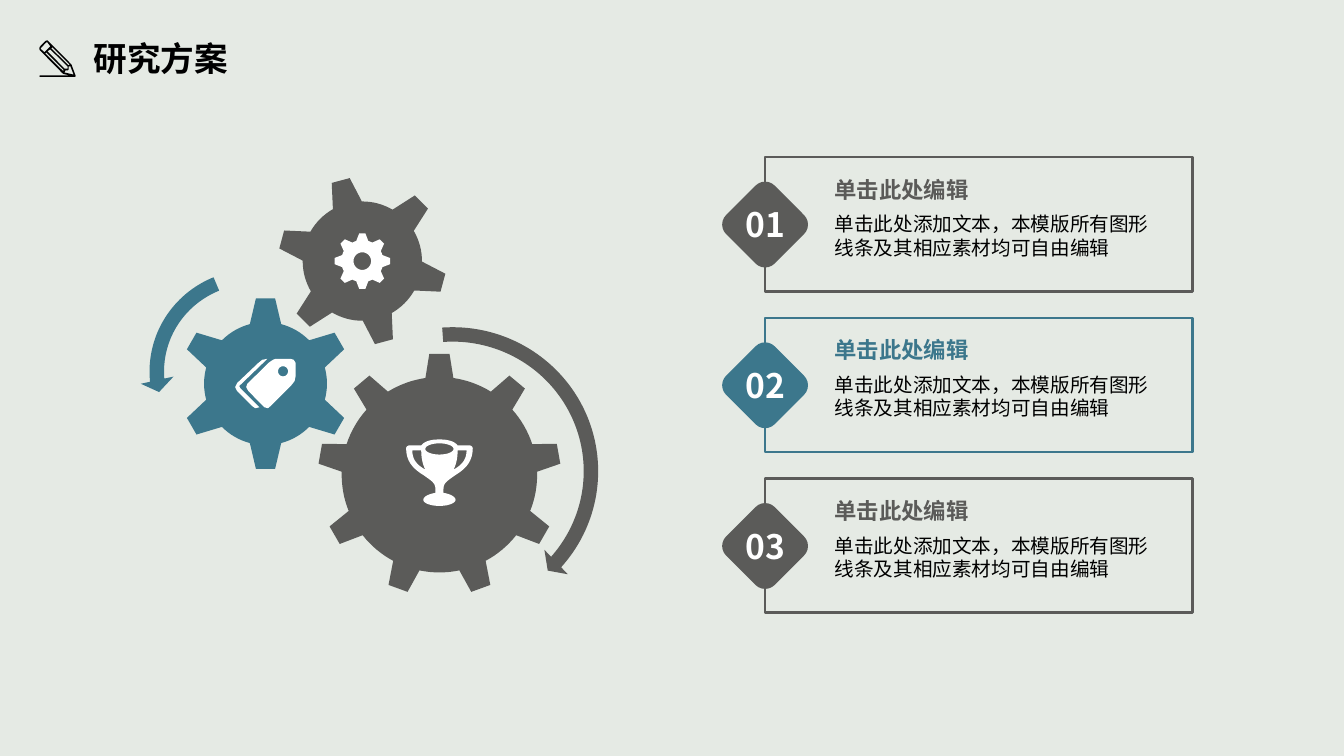
from dataclasses import dataclass
from math import asin, cos, hypot, pi, radians, sin

from lxml.etree import SubElement
from pptx import Presentation
from pptx.dml.color import RGBColor as RGB
from pptx.enum.shapes import MSO_SHAPE as Preset
from pptx.enum.text import MSO_AUTO_SIZE as AutoSize, PP_ALIGN as Align
from pptx.oxml.ns import qn
from pptx.util import Pt

FONT = "Noto Sans CJK SC"
COLORS = {
    "paper": "E5EAE4",
    "dark": "5B5B59",
    "teal": "3C778C",
    "white": "FFFFFF",
    "black": "000000",
}
HEADING = "单击此处编辑"
BODY = "单击此处添加文本，本模版所有图形线条及其相应素材均可自由编辑"
CARD_TOP, CARD_PITCH = 112.3, 114.8
UNITS_PER_POINT = 100
Points = list[tuple[float, float]]


@dataclass
class Gear:
    x: float
    y: float
    teeth: int
    tip_radius: float
    tip_half: float
    root_radius: float
    root_half: float
    color: str
    turn: float = 0
    hole: float = 0


@dataclass
class Arrow:
    preset: Preset
    box: tuple[float, float, float, float]
    adjustments: tuple[float, ...]
    color: str


@dataclass
class Card:
    number: str
    color: str


@dataclass
class Icon:
    x: float
    y: float
    contours: list[Points]
    color: str


def rgb(color: str) -> RGB:
    return RGB.from_string(COLORS[color])


def ellipse(x: float, y: float, rx: float, ry: float, steps: int = 32) -> Points:
    turns = [2 * pi * i / steps for i in range(steps)]
    return [(x + rx * cos(t), y + ry * sin(t)) for t in turns]


def flatten(path: list[tuple[float, ...]], steps: int = 10) -> Points:
    points: Points = []
    for node in path:
        if len(node) == 2:
            points.append(node)
            continue
        x0, y0 = points[-1]
        x1, y1, x2, y2, x3, y3 = node
        for i in range(1, steps + 1):
            t = i / steps
            a, b, c, d = (1 - t) ** 3, 3 * t * (1 - t) ** 2, 3 * t * t * (1 - t), t ** 3
            points.append((a * x0 + b * x1 + c * x2 + d * x3,
                           a * y0 + b * y1 + c * y2 + d * y3))
    return points


def mirror(points: Points) -> Points:
    return [(-x, y) for x, y in reversed(points)]


def gear_outline(gear: Gear, arc_steps: int = 8) -> Points:
    pitch = 2 * pi / gear.teeth
    root_angle = asin(gear.root_half / gear.root_radius)
    tip_angle = asin(gear.tip_half / gear.tip_radius)
    tip_corner = hypot(gear.tip_radius, gear.tip_half)
    valley = pitch - 2 * root_angle
    outline: Points = []
    for tooth in range(gear.teeth):
        middle = radians(gear.turn) + tooth * pitch
        corners = [(tip_corner, middle - tip_angle), (tip_corner, middle + tip_angle)]
        corners += [(gear.root_radius, middle + root_angle + valley * i / arc_steps)
                    for i in range(arc_steps + 1)]
        outline += [(r * sin(a), -r * cos(a)) for r, a in corners]
    return outline


def paint(shape, color: str) -> None:
    shape.shadow.inherit = False
    shape.fill.solid()
    shape.fill.fore_color.rgb = rgb(color)
    shape.line.fill.background()


def draw_icon(shapes, icon: Icon) -> None:
    contours = [[((icon.x + x) * UNITS_PER_POINT, (icon.y + y) * UNITS_PER_POINT)
                 for x, y in contour] for contour in icon.contours]
    builder = shapes.build_freeform(*contours[0][0], scale=Pt(1) / UNITS_PER_POINT)
    builder.add_line_segments(contours[0][1:], close=True)
    for contour in contours[1:]:
        builder.move_to(*contour[0])
        builder.add_line_segments(contour[1:], close=True)
    paint(builder.convert_to_shape(), icon.color)


def draw_gear(shapes, gear: Gear) -> None:
    contours = [gear_outline(gear)]
    if gear.hole:
        contours.append(ellipse(0, 0, gear.hole, gear.hole))
    draw_icon(shapes, Icon(gear.x, gear.y, contours, gear.color))


def draw_arrow(shapes, arrow: Arrow) -> None:
    curve = shapes.add_shape(arrow.preset, *map(Pt, arrow.box))
    for index, value in enumerate(arrow.adjustments):
        curve.adjustments[index] = value
    paint(curve, arrow.color)


def write(shapes, box: tuple[float, float, float, float], words: str, size: float,
          color: str, bold: bool = True, wrap: bool = False,
          align: Align = Align.LEFT) -> None:
    frame = shapes.add_textbox(*map(Pt, box)).text_frame
    frame.word_wrap = wrap
    frame.auto_size = AutoSize.SHAPE_TO_FIT_TEXT
    paragraph = frame.paragraphs[0]
    paragraph.text = words
    paragraph.alignment = align
    font = paragraph.font
    font.size, font.bold, font.name = Pt(size), bold, FONT
    font.color.rgb = rgb(color)
    defaults = paragraph._p.find(".//" + qn("a:defRPr"))
    SubElement(defaults, qn("a:ea")).set("typeface", FONT)


def draw_card(slide_shapes, card: Card, top: float) -> None:
    shapes = slide_shapes.add_group_shape().shapes
    frame = shapes.add_shape(Preset.RECTANGLE, Pt(546.5), Pt(top), Pt(305.3), Pt(95.8))
    frame.shadow.inherit = False
    frame.fill.background()
    frame.line.color.rgb = rgb(card.color)
    frame.line.width = Pt(1.75)
    diamond = shapes.add_shape(Preset.ROUNDED_RECTANGLE, Pt(522), Pt(top + 23.6), Pt(49), Pt(49))
    diamond.rotation = 45
    diamond.adjustments[0] = 0.197
    paint(diamond, card.color)
    write(shapes, (525.4, top + 29.9, 42.5, 36), card.number, 24, "white", align=Align.CENTER)
    write(shapes, (589, top + 9.7, 112, 26.6), HEADING, 16, card.color)
    write(shapes, (589, top + 35.6, 242.6, 41), BODY, 14, "black", bold=False, wrap=True)


ARROWS = [
    Arrow(Preset.CIRCULAR_ARROW, (212.4, 226.8, 221.8, 219.6),
          (0.047, 2.99, 24.76, 159.507, 0.055), "dark"),
    Arrow(Preset.LEFT_CIRCULAR_ARROW, (100.1, 185.8, 161.3, 159.1),
          (0.065, 4.3, 104.891, 148.378, 0.075), "teal"),
]
GEARS = [
    Gear(189.7, 274, 6, 60.9, 6.8, 43.9, 11.2, "teal"),
    Gear(258.8, 186.5, 6, 59.6, 6.6, 42.6, 10.7, "dark", turn=-15),
    Gear(313.9, 339.1, 9, 86.4, 7.2, 69.8, 10, "dark"),
    Gear(258.8, 186.5, 8, 19.8, 2.2, 15, 4.3, "white", hole=6.3),
]
CARDS = [Card("01", "dark"), Card("02", "teal"), Card("03", "dark")]

CUP_SIDE = flatten([
    (0, 0), (7.9, 0, 11.5, 2.2, 13, 4.3), (21.6, 4.3),
    (22.3, 4.3, 23.8, 5, 23.8, 6.5), (23.8, 17.3, 16.6, 22.3, 10.8, 25.9),
    (5.8, 29.5, 2.9, 31, 2.9, 35.3), (2.9, 38.2),
    (7.9, 38.9, 11.5, 41, 11.5, 43.2), (11.5, 45.4, 6.5, 47.5, 0, 47.5)])
CUP_HANDLE = flatten([
    (10.1, 21.6), (11.5, 18.7, 13, 14.4, 13, 7.9), (19.4, 7.9),
    (19.4, 15.1, 15.1, 18.7, 10.1, 21.6)])
TROPHY = Icon(313.9, 313.9, [
    CUP_SIDE + mirror(CUP_SIDE), CUP_HANDLE, mirror(CUP_HANDLE),
    ellipse(0, 6.8, 10.1, 4)], "white")
TAGS = Icon(168, 256.3, [
    [(39.6, 0), (28.8, 0), (27, 0.7), (23.8, 2.9), (8.6, 18), (7.9, 20.2), (9.4, 23),
     (20.9, 34.6), (23.4, 35.3), (25.2, 33.8), (40.3, 18.7), (42.5, 15.8),
     (43.2, 12.2), (43.2, 2.9), (41.8, 0.7)],
    ellipse(34.2, 8.9, 3.6, 3.6),
    [(3.6, 20.9), (17.3, 34.6), (14.4, 35.3), (12.2, 33.8), (1.4, 23), (0, 20.2),
     (1.4, 17.3), (16.6, 2.9), (19.4, 0.7), (23, 0), (2.9, 19.4)]], "white")
PENCIL = Icon(28.1, 28.8, [
    [(25.9, 25.2), (23, 17.3), (6.5, 0.7), (5.8, 0), (4.5, 0.4), (0.3, 4.7), (0, 6),
     (0.3, 7), (16.6, 23.6), (17.3, 24.1), (21.6, 25.1), (0.5, 25.1), (0, 25.6),
     (0.5, 26.2), (25.4, 26.2), (25.9, 25.7)],
    [(24.5, 24.5), (18, 23), (18.7, 21.6), (20.2, 21.6), (20.9, 20.9), (20.9, 18.7), (22.3, 18.7)],
    [(9.4, 5), (21.6, 17.3), (20.9, 18), (8.6, 5.8)],
    [(7.9, 6.5), (20.2, 18.7), (20.2, 20.2), (18, 20.2), (5.8, 7.9)],
    [(0.9, 5.8), (5, 1.5), (5.8, 1.5), (7.9, 4.3), (3.6, 8.6), (1.1, 6.1)],
    [(5, 8.6), (17.3, 20.9), (17.3, 22.3), (4.3, 9.4)]], "black")


def main() -> None:
    deck = Presentation()
    deck.slide_width, deck.slide_height = Pt(960), Pt(540)
    slide = deck.slides.add_slide(deck.slide_layouts[6])
    slide.background.fill.solid()
    slide.background.fill.fore_color.rgb = rgb("paper")
    for arrow in ARROWS:
        draw_arrow(slide.shapes, arrow)
    for gear in GEARS:
        draw_gear(slide.shapes, gear)
    for icon in (TAGS, TROPHY, PENCIL):
        draw_icon(slide.shapes, icon)
    for row, card in enumerate(CARDS):
        draw_card(slide.shapes, card, CARD_TOP + row * CARD_PITCH)
    write(slide.shapes, (59.8, 23.8, 184.3, 36), "研究方案", 24, "black", wrap=True)
    deck.save("out.pptx")


if __name__ == "__main__":
    main()
